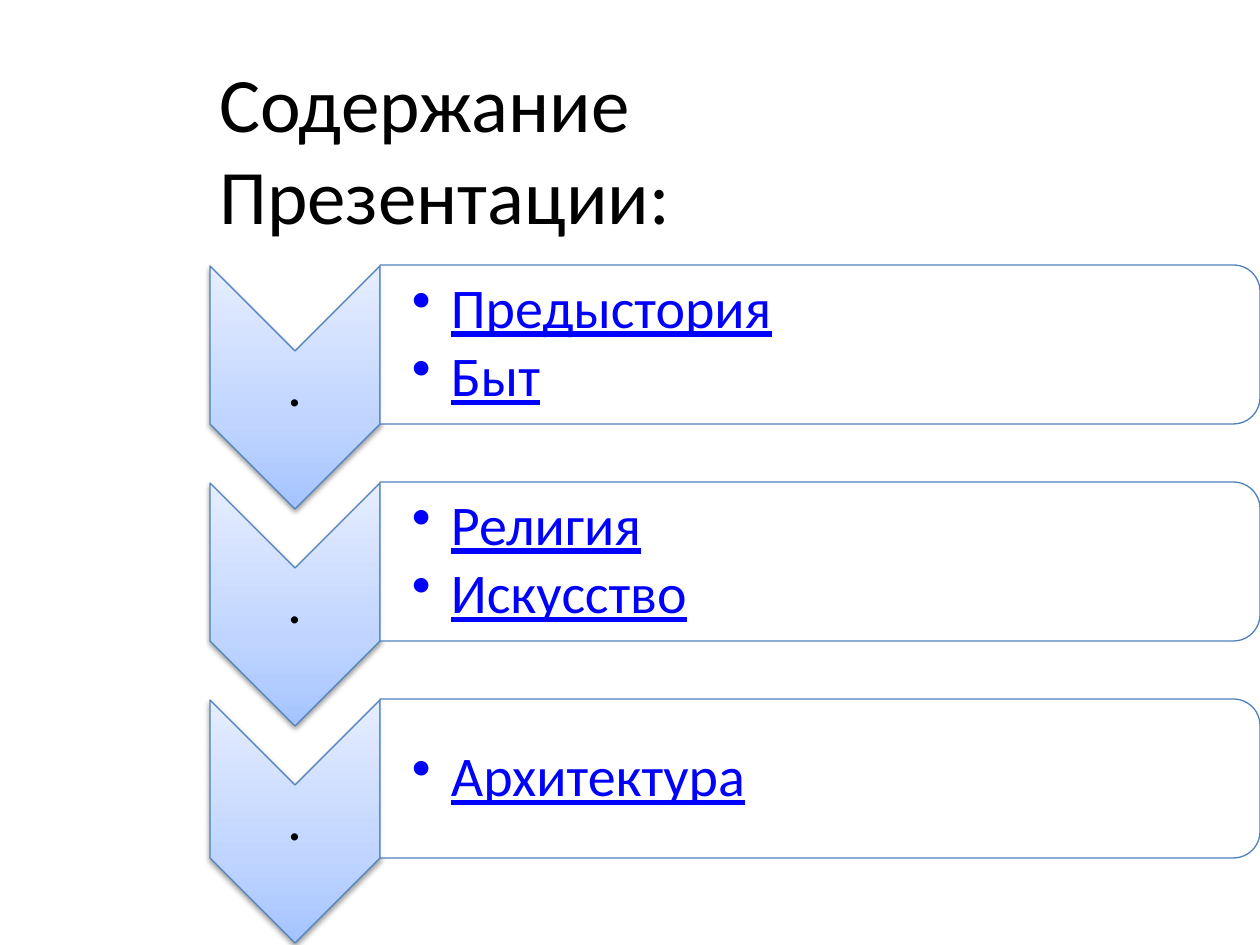
from lxml import etree
from pptx import Presentation
from pptx import util as u
from pptx.dml import color
from pptx.enum import shapes, text
from pptx.oxml import ns

PX = 914400 / 126
FONT = "Calibri"
ROWS = [["Предыстория", "Быт"], ["Религия", "Искусство"], ["Архитектура"]]
ROW_PITCH = 217
GRADIENT = [(0, "A4C4FF"), (35, "BFD4FF"), (100, "E6EEFF")]


def px(value):
    return u.Emu(round(value * PX))


def rgb(value):
    return color.RGBColor.from_string(value)


def add_node(parent, tag, **attributes):
    return etree.SubElement(parent, ns.qn(tag), attributes)


def add_turned_shape(page, kind, left, top, width, height):
    shift = (width - height) / 2
    shape = page.shapes.add_shape(
        kind, px(left + shift), px(top - shift), px(height), px(width))
    shape.rotation = 90
    shape.shadow.inherit = False
    shape.fill.solid()
    shape.fill.fore_color.rgb = rgb("FFFFFF")
    shape.line.color.rgb = rgb("4F81BD")
    shape.line.width = u.Pt(0.75)
    return shape


def add_text_box(page, left, top, width, height, margins=None):
    box = page.shapes.add_textbox(px(left), px(top), px(width), px(height))
    frame = box.text_frame
    frame.word_wrap = True
    if margins:
        frame.vertical_anchor = text.MSO_ANCHOR.MIDDLE
        (frame.margin_left, frame.margin_top,
         frame.margin_right, frame.margin_bottom) = map(px, margins)
    return frame


def style_text(para, size, colour):
    for span in para.runs:
        span.font.name = FONT
        span.font.size = u.Pt(size)
        span.font.color.rgb = rgb(colour)


def fill_gradient(shape):
    properties = shape.element.spPr
    solid = properties.find(ns.qn("a:solidFill"))
    gradient = etree.Element(ns.qn("a:gradFill"), rotWithShape="0")
    stops = add_node(gradient, "a:gsLst")
    for position, colour in GRADIENT:
        stop = add_node(stops, "a:gs", pos=str(position * 1000))
        add_node(stop, "a:srgbClr", val=colour)
    add_node(gradient, "a:lin", ang="16200000", scaled="0")
    properties.replace(solid, gradient)


def add_shadow(shape):
    effects = shape.element.spPr.find(ns.qn("a:effectLst"))
    shadow = add_node(effects, "a:outerShdw", blurRad="40000", dist="20000",
                      dir="5400000", rotWithShape="0")
    shade = add_node(shadow, "a:srgbClr", val="000000")
    add_node(shade, "a:alpha", val="38000")


def add_chevron(page, left, top, width, height):
    chevron = add_turned_shape(
        page, shapes.MSO_SHAPE.CHEVRON, left, top, width, height)
    fill_gradient(chevron)
    add_shadow(chevron)
    frame = add_text_box(page, left, top + width / 2, width,
                         height - width, (2, 2, 2, 2))
    frame.text = "."
    para = frame.paragraphs[0]
    para.alignment = text.PP_ALIGN.CENTER
    para.line_spacing = 0.9
    para.space_after = u.Pt(12)
    style_text(para, 34, "000000")


def add_panel(page, left, top, width, height, topics):
    panel = add_turned_shape(page, shapes.MSO_SHAPE.ROUND_2_SAME_RECTANGLE,
                             left, top, width, height)
    paint = panel.element.spPr.find(ns.qn("a:solidFill"))
    add_node(paint[0], "a:alpha", val="90000")
    frame = add_text_box(page, left, top + 8, width - 8, height - 16,
                         (32, 2, 2, 2))
    frame.text = "\n".join(topics)
    for para in frame.paragraphs:
        para.level = 1
        properties = para._p.get_or_add_pPr()
        properties.set("marL", str(px(39)))
        properties.set("indent", str(px(-39)))
        add_node(properties, "a:buChar", char="•")
        para.line_spacing = 0.9
        para.space_after = u.Pt(4.5)
        style_text(para, 32, "0000FF")
        for span in para.runs:
            span.font.underline = True


def add_row(page, left, top, width, topics):
    arrow_width = 170
    add_chevron(page, left, top + 1, arrow_width, 243)
    add_panel(page, left + arrow_width, top, width - arrow_width, 159, topics)


def add_title(page, left, top, width, height):
    frame = add_text_box(page, left, top, width, height)
    frame.auto_size = text.MSO_AUTO_SIZE.SHAPE_TO_FIT_TEXT
    frame.text = "Содержание Презентации:"
    style_text(frame.paragraphs[0], 44, "000000")


def main():
    deck = Presentation()
    deck.slide_width, deck.slide_height = px(1260), px(945)
    page = deck.slides.add_slide(deck.slide_layouts[6])
    for index, topics in enumerate(ROWS):
        add_row(page, 210, 265 + index * ROW_PITCH, 1050, topics)
    add_title(page, 207, 49, 728, 199)
    deck.save("out.pptx")


if __name__ == "__main__":
    main()
